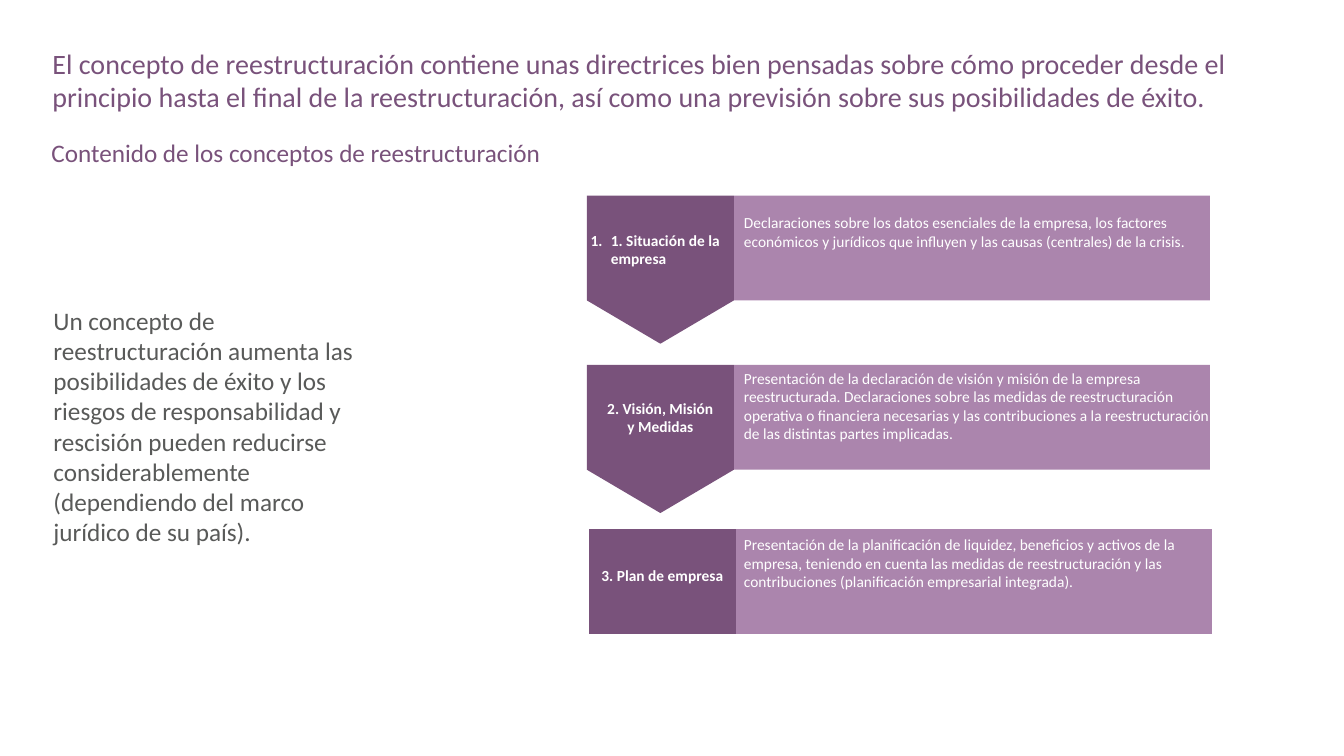
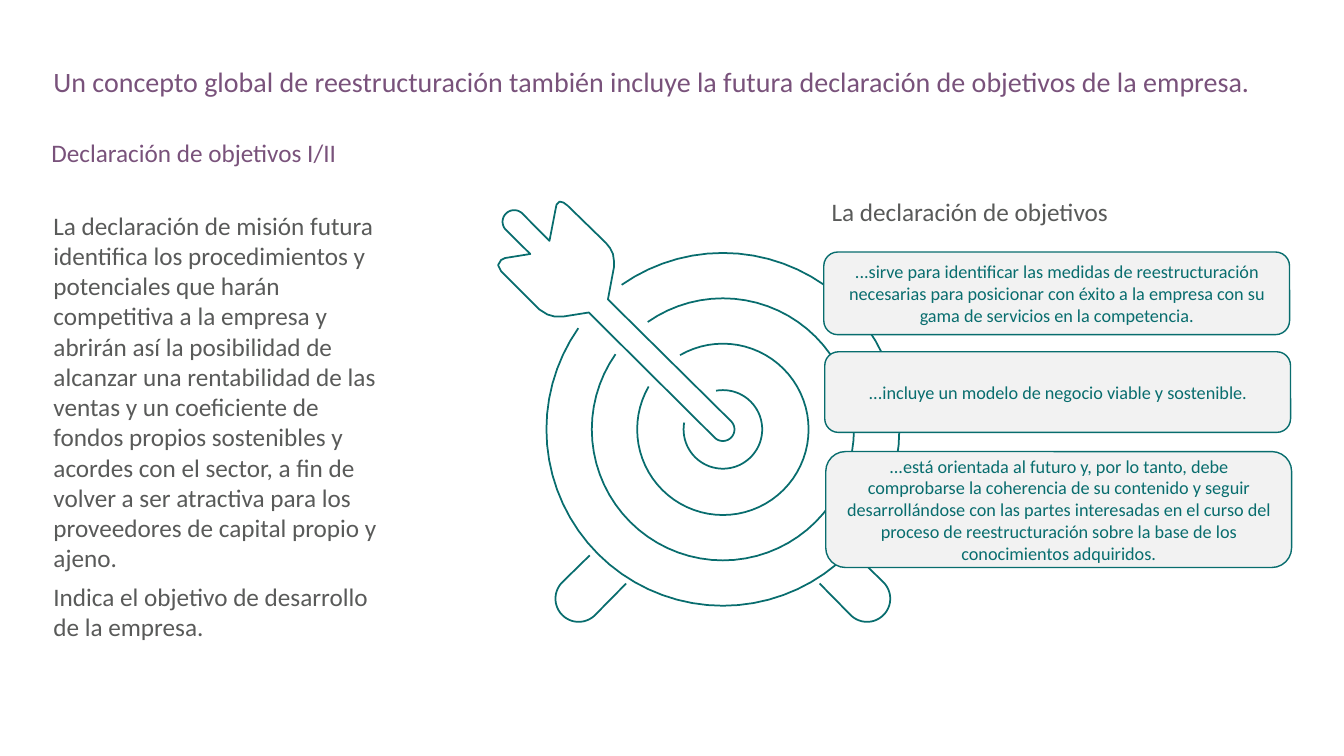
from copy import deepcopy
from dataclasses import dataclass
from math import cos, radians, sin
from typing import Optional

from lxml.etree import SubElement
from pptx import Presentation
from pptx.dml.color import RGBColor
from pptx.enum.shapes import MSO_SHAPE as Shape
from pptx.enum.text import MSO_ANCHOR as Anchor, MSO_AUTO_SIZE as AutoSize, PP_ALIGN as Align
from pptx.oxml.ns import qn
from pptx.util import Emu, Pt

PX = 9144
FONT = "Calibri"
PLUM = RGBColor(0x79, 0x52, 0x7B)
MAUVE = RGBColor(0xAB, 0x85, 0xAD)
TEAL = RGBColor(0x08, 0x6D, 0x6E)
GRAY = RGBColor(0x59, 0x5A, 0x59)
PALE = RGBColor(0xF2, 0xF2, 0xF2)
WHITE = RGBColor(0xFF, 0xFF, 0xFF)

Point = tuple[float, float]


@dataclass(frozen=True)
class Box:
    left: int
    top: int
    width: int
    height: int

    def emu(self) -> list[Emu]:
        return [Emu(v * PX) for v in (self.left, self.top, self.width, self.height)]


@dataclass(frozen=True)
class Style:
    size: int
    color: RGBColor
    bold: bool = False
    align: Align = Align.LEFT
    anchor: Anchor = Anchor.TOP
    spacing: float = 1.0


@dataclass(frozen=True)
class Step:
    left: int
    top: int
    label: str
    label_top: int
    detail: str
    detail_top: int
    detail_width: int = 462
    pointed: bool = True
    numbered: bool = False


@dataclass(frozen=True)
class Ring:
    radius: int
    half_gap: int


@dataclass(frozen=True)
class Goal:
    box: Box
    text: str


TITLE = Style(20, PLUM)
SUBTITLE = Style(18, PLUM, spacing=0.9)
BODY = Style(18, GRAY, anchor=Anchor.MIDDLE)
HEADING = Style(18, GRAY)
DETAIL = Style(11, WHITE)
LABEL = Style(11, WHITE, bold=True, align=Align.CENTER)
NUMBERED_LABEL = Style(11, WHITE, bold=True)
GOAL = Style(13, TEAL, align=Align.CENTER, anchor=Anchor.MIDDLE)

LABEL_WIDTH, PANEL_WIDTH, STEP_HEIGHT, TIP = 146, 472, 104, 43
STEPS = [
    Step(582, 194, "1. Situación de la empresa", 224,
         "Declaraciones sobre los datos esenciales de la empresa, los factores económicos y "
         "jurídicos que influyen y las causas (centrales) de la crisis.", 207, numbered=True),
    Step(582, 362, "2. Visión, Misión\vy Medidas", 391,
         "Presentación de la declaración de visión y misión de la empresa reestructurada. "
         "Declaraciones sobre las medidas de reestructuración operativa o financiera necesarias "
         "y las contribuciones a la reestructuración de las distintas partes implicadas.",
         361, detail_width=500),
    Step(584, 525, "3. Plan de empresa", 557,
         "Presentación de la planificación de liquidez, beneficios y activos de la empresa, "
         "teniendo en cuenta las medidas de reestructuración y las contribuciones "
         "(planificación empresarial integrada).", 526, pointed=False),
]

CENTER_X, CENTER_Y = 717, 426
RINGS = [Ring(175, 10), Ring(130, 10), Ring(85, 15), Ring(39, 35)]
UPPER_FIN = [(545, 239), (551, 208), (552, 203), (555, 200), (559, 201), (563, 204), (601, 241),
             (605, 246), (608, 252), (609, 259), (609, 265), (603, 297)]
LOWER_FIN = [(584, 310), (559, 314), (550, 314), (543, 312), (535, 307), (497, 269), (494, 263),
             (497, 258), (501, 256), (526, 252)]
GOALS = [
    Goal(Box(817, 250, 462, 82),
         "...sirve para identificar las medidas de reestructuración necesarias para posicionar "
         "con éxito a la empresa con su gama de servicios en la competencia."),
    Goal(Box(818, 349, 462, 80), "...incluye un modelo de negocio viable y sostenible."),
    Goal(Box(819, 448, 462, 115),
         "...está orientada al futuro y, por lo tanto, debe comprobarse la coherencia de su "
         "contenido y seguir desarrollándose con las partes interesadas en el curso del proceso "
         "de reestructuración sobre la base de los conocimientos adquiridos."),
]


def write(sp, paragraphs: list[str], style: Style) -> None:
    tf = sp.text_frame
    tf.word_wrap = True
    tf.auto_size = AutoSize.NONE
    tf.vertical_anchor = style.anchor
    for i, text in enumerate(paragraphs):
        p = tf.add_paragraph() if i else tf.paragraphs[0]
        p.text = text
        p.alignment = style.align
        p.line_spacing = style.spacing
        p.space_before = Pt(6 if i else 0)
        for r in p.runs:
            r.font.name = FONT
            r.font.size = Pt(style.size)
            r.font.bold = style.bold
            r.font.color.rgb = style.color
        for br in p._p.findall(qn("a:br")):
            br.append(deepcopy(p.runs[0]._r.rPr))


def fill_placeholder(sp, box: Box, paragraphs: list[str], style: Style) -> None:
    sp.left, sp.top, sp.width, sp.height = box.emu()
    write(sp, paragraphs, style)
    for p in sp.text_frame.paragraphs:
        pPr = p._p.get_or_add_pPr()
        pPr.set("marL", "0")
        pPr.set("indent", "0")
        SubElement(pPr, qn("a:buNone"))


def add_content_slide(prs, title: str, title_box: Box, title_style: Style,
                      subtitle: str, body: list[str]):
    s = prs.slides.add_slide(prs.slide_layouts[3])
    fill_placeholder(s.shapes.title, title_box, [title], title_style)
    fill_placeholder(s.placeholders[1], Box(43, 179, 349, 487), body, BODY)
    fill_placeholder(s.placeholders[2], Box(41, 135, 1256, 28), [subtitle], SUBTITLE)
    return s


def add_text(s, box: Box, text: str, style: Style):
    sp = s.shapes.add_textbox(*box.emu())
    write(sp, [text], style)
    return sp


def paint(sp, fill: Optional[RGBColor], line: Optional[RGBColor] = None,
          line_width: float = 1) -> None:
    sp.shadow.inherit = False
    if fill is None:
        sp.fill.background()
    else:
        sp.fill.solid()
        sp.fill.fore_color.rgb = fill
    if line is None:
        sp.line.fill.background()
    else:
        sp.line.color.rgb = line
        sp.line.width = Pt(line_width)


def add_box(s, shape: Shape, box: Box, fill: RGBColor, line: Optional[RGBColor] = None):
    sp = s.shapes.add_shape(shape, *box.emu())
    paint(sp, fill, line)
    return sp


def add_outline(s, points: list[Point], closed: bool = False):
    start, *rest = [(round(x * PX), round(y * PX)) for x, y in points]
    builder = s.shapes.build_freeform(*start, scale=1.0)
    builder.add_line_segments(rest, close=closed)
    return builder.convert_to_shape()


def arc(x: float, y: float, radius: float, start: int, end: int) -> list[Point]:
    steps = max(12, (end - start) // 5)
    angles = [radians(start + (end - start) * i / steps) for i in range(steps + 1)]
    return [(x + radius * sin(a), y - radius * cos(a)) for a in angles]


def add_number(sp) -> None:
    pPr = sp.text_frame.paragraphs[0]._p.get_or_add_pPr()
    pPr.set("marL", str(20 * PX))
    pPr.set("indent", str(-20 * PX))
    color = SubElement(pPr, qn("a:buClr"))
    SubElement(color, qn("a:srgbClr"), val=str(WHITE))
    SubElement(pPr, qn("a:buFont"), typeface="+mj-lt")
    SubElement(pPr, qn("a:buAutoNum"), type="arabicPeriod")


def add_step(s, step: Step) -> None:
    right, bottom = step.left + LABEL_WIDTH, step.top + STEP_HEIGHT
    add_box(s, Shape.RECTANGLE, Box(right, step.top, PANEL_WIDTH, STEP_HEIGHT), MAUVE)
    points = [(step.left, step.top), (right, step.top), (right, bottom), (step.left, bottom)]
    if step.pointed:
        points.insert(3, (step.left + LABEL_WIDTH / 2, bottom + TIP))
    paint(add_outline(s, points, closed=True), PLUM)
    label = add_text(s, Box(step.left - 6, step.label_top, 158, 47), step.label,
                     NUMBERED_LABEL if step.numbered else LABEL)
    if step.numbered:
        add_number(label)
    add_text(s, Box(728, step.detail_top, step.detail_width, 84), step.detail, DETAIL)


def add_target(s) -> None:
    outlines = [arc(CENTER_X, CENTER_Y, ring.radius, ring.half_gap - 45, 315 - ring.half_gap)
                for ring in RINGS]
    right_leg = [(849, 551), *arc(860, 594, 23, 45, 225), (813, 579)]
    left_leg = [(2 * CENTER_X - x, y) for x, y in right_leg]
    for points in [*outlines, right_leg, left_leg]:
        paint(add_outline(s, points), None, TEAL, 1.25)
    dart = [*arc(510, 220, 11.5, 225, 405), *UPPER_FIN,
            *arc(CENTER_X, CENTER_Y, 11.5, 45, 225), *LOWER_FIN]
    paint(add_outline(s, dart, closed=True), None, TEAL, 1.25)


def add_goal(s, goal: Goal) -> None:
    sp = add_box(s, Shape.ROUNDED_RECTANGLE, goal.box, PALE, TEAL)
    sp.adjustments[0] = 0.17
    write(sp, [goal.text], GOAL)


def build_concept_slide(prs) -> None:
    s = add_content_slide(
        prs,
        "El concepto de reestructuración contiene unas directrices bien pensadas sobre cómo "
        "proceder desde el principio hasta el final de la reestructuración, así como una "
        "previsión sobre sus posibilidades de éxito.",
        Box(42, 41, 1254, 64), TITLE,
        "Contenido de los conceptos de reestructuración",
        ["Un concepto de reestructuración aumenta las posibilidades de éxito y los riesgos de "
         "responsabilidad y rescisión pueden reducirse considerablemente (dependiendo del marco "
         "jurídico de su país)."])
    for step in STEPS:
        add_step(s, step)


def build_goals_slide(prs) -> None:
    s = add_content_slide(
        prs,
        "Un concepto global de reestructuración también incluye la futura declaración de "
        "objetivos de la empresa.",
        Box(43, 63, 1254, 64), Style(20, PLUM, spacing=0.9),
        "Declaración de objetivos I/II",
        ["La declaración de misión futura identifica los procedimientos y potenciales que harán "
         "competitiva a la empresa y abrirán así la posibilidad de alcanzar una rentabilidad de "
         "las ventas y un coeficiente de fondos propios sostenibles y acordes con el sector, a "
         "fin de volver a ser atractiva para los proveedores de capital propio y ajeno.",
         "Indica el objetivo de desarrollo de la empresa."])
    add_target(s)
    add_text(s, Box(815, 190, 336, 40), "La declaración de objetivos", HEADING)
    for goal in GOALS:
        add_goal(s, goal)


def main() -> None:
    prs = Presentation()
    prs.slide_width, prs.slide_height = Emu(1333 * PX), Emu(750 * PX)
    build_concept_slide(prs)
    build_goals_slide(prs)
    prs.save("out.pptx")


if __name__ == "__main__":
    main()
